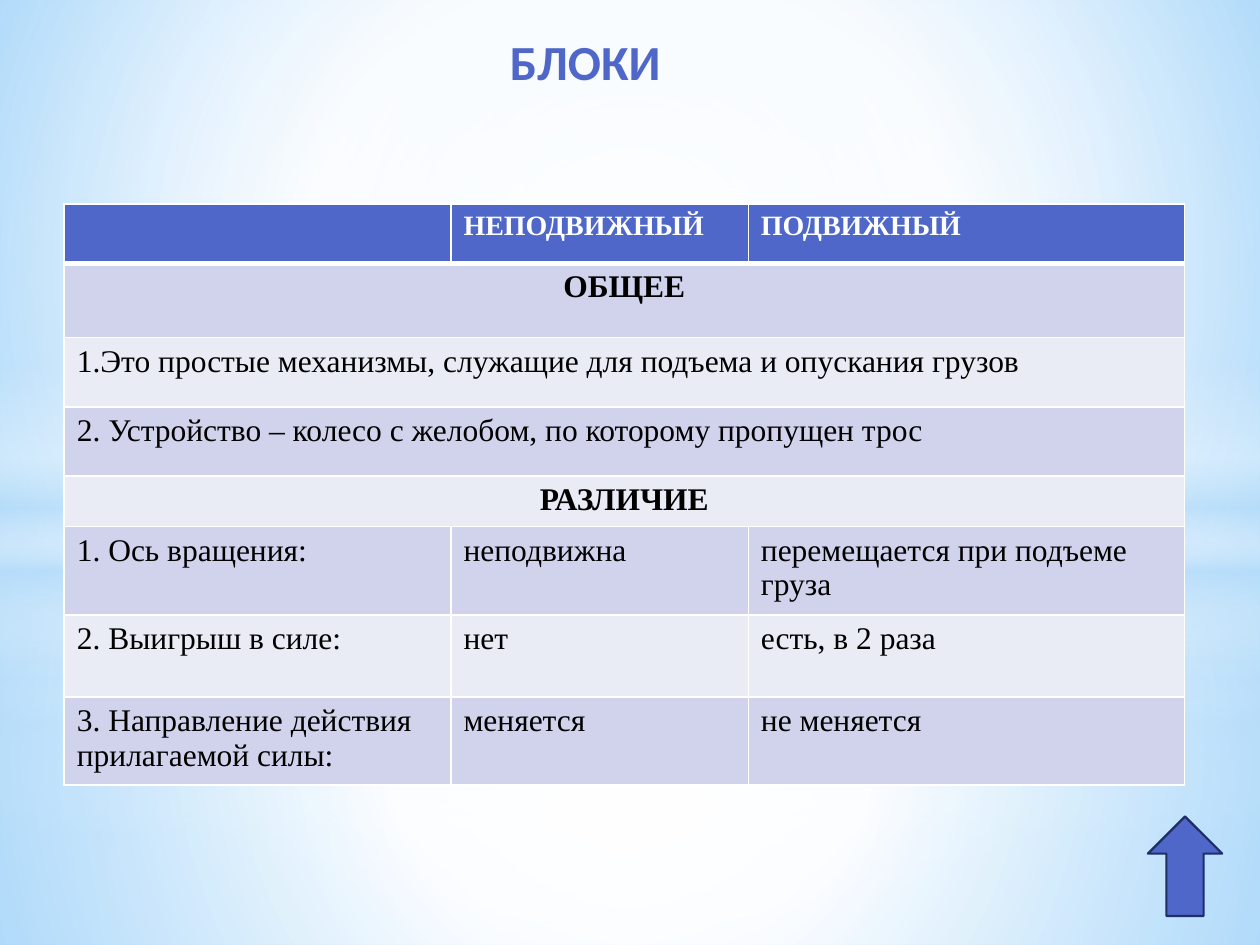
from lxml import etree
from pptx import Presentation
from pptx.dml.color import RGBColor
from pptx.enum import shapes, text
from pptx.oxml import ns
from pptx.util import Inches, Pt

BLUE = RGBColor(0x4E, 0x67, 0xC8)
NAVY = RGBColor(0x1F, 0x2E, 0x69)
DARK = RGBColor(0xD0, 0xD3, 0xEB)
LIGHT = RGBColor(0xE9, 0xEB, 0xF5)
WHITE = RGBColor(0xFF, 0xFF, 0xFF)
BLACK = RGBColor(0, 0, 0)
PALE = RGBColor(0xB4, 0xDC, 0xFA)
SKY = RGBColor(0x9E, 0xD5, 0xFF)
AZURE = RGBColor(0x5B, 0xB9, 0xFF)

SHAPE = shapes.MSO_SHAPE
CENTER = text.PP_ALIGN.CENTER
LEFT = text.PP_ALIGN.LEFT
MIDDLE = (50, 50, 50, 50)

COLS = (3.07, 2.36, 3.46)
HEIGHTS = (0.47, 0.59, 0.55, 0.55, 0.37, 0.65, 0.65, 0.65)
HEADS = ("ОБЩЕЕ", "РАЗЛИЧИЕ")
ROWS = (
    ("", "НЕПОДВИЖНЫЙ", "ПОДВИЖНЫЙ"),
    ("ОБЩЕЕ",),
    ("1.Это простые механизмы, служащие для подъема и опускания грузов",),
    ("2. Устройство – колесо с желобом, по которому пропущен трос",),
    ("РАЗЛИЧИЕ",),
    ("1. Ось вращения:", "неподвижна", "перемещается при подъеме груза"),
    ("2. Выигрыш в силе:", "нет", "есть, в 2 раза"),
    ("3. Направление действия прилагаемой силы:", "меняется", "не меняется"),
)


def add(node, tag, **attrs):
    """Append a drawing element and return it."""
    return etree.SubElement(node, ns.qn(tag), {k: str(v) for k, v in attrs.items()})


def shade(fill, root, stops, focus=None):
    """Fill with (position, colour, opacity) stops, around focus or top to bottom."""
    fill.gradient()
    grad = root.xpath(".//a:gradFill")[0]
    for child in list(grad):
        grad.remove(child)
    group = add(grad, "a:gsLst")
    for pos, color, alpha in stops:
        tone = add(add(group, "a:gs", pos=pos * 1000), "a:srgbClr", val=color)
        if alpha < 100:
            add(tone, "a:alpha", val=alpha * 1000)
    if focus:
        sides = {side: part * 1000 for side, part in zip("ltrb", focus)}
        add(add(grad, "a:path", path="circle"), "a:fillToRect", **sides)
    else:
        add(grad, "a:lin", ang=90 * 60000, scaled=0)


def edge(cell, base):
    """Draw white borders, with the given width at the bottom."""
    props = cell._tc.get_or_add_tcPr()
    for spot, (side, width) in enumerate(zip("LRTB", (1, 1, 1, base))):
        line = etree.Element(ns.qn(f"a:ln{side}"), w=str(int(Pt(width))))
        add(add(line, "a:solidFill"), "a:srgbClr", val=WHITE)
        props.insert(spot, line)


class Deck:
    def __init__(self, font):
        self.font = font
        self.prs = Presentation()
        self.prs.slide_width, self.prs.slide_height = Inches(10), Inches(7.5)
        self.slide = self.prs.slides.add_slide(self.prs.slide_layouts[6])

    def back(self, stops, focus):
        shade(self.slide.background.fill, self.slide._element, stops, focus)

    def shape(self, kind, *box):
        item = self.slide.shapes.add_shape(kind, *map(Inches, box))
        item.shadow.inherit = False
        item.line.fill.background()
        return item

    def glow(self, kind, top, height, stops, focus=None):
        """Add a full-width gradient layer."""
        item = self.shape(kind, 0, top, 10, height)
        shade(item.fill, item._element, stops, focus)

    def label(self, frame, words, size, color, bold=False, align=LEFT, font=None):
        para = frame.paragraphs[0]
        para.alignment = align
        run = para.add_run()
        run.text = words
        run.font.name = font or self.font
        run.font.size, run.font.bold = Pt(size), bold
        run.font.color.rgb = color

    def title(self, words, *box):
        frame = self.slide.shapes.add_textbox(*map(Inches, box)).text_frame
        frame.word_wrap = True
        frame.vertical_anchor = text.MSO_ANCHOR.MIDDLE
        self.label(frame, words, 28, BLUE, True, CENTER, "Calibri")

    def table(self, left, top):
        box = map(Inches, (left, top, sum(COLS), sum(HEIGHTS)))
        grid = self.slide.shapes.add_table(len(ROWS), len(COLS), *box).table
        for col, width in zip(grid.columns, COLS):
            col.width = Inches(width)
        for r, (words, height) in enumerate(zip(ROWS, HEIGHTS)):
            grid.rows[r].height = Inches(height)
            for c in range(len(COLS)):
                cell = grid.cell(r, c)
                cell.fill.solid()
                cell.fill.fore_color.rgb = (DARK if r % 2 else LIGHT) if r else BLUE
                edge(cell, 1 if r else 3)
            if len(words) == 1:
                grid.cell(r, 0).merge(grid.cell(r, len(COLS) - 1))
            for c, word in enumerate(words):
                frame = grid.cell(r, c).text_frame
                if r == 0:
                    if word:
                        self.label(frame, word, 16, WHITE, True)
                else:
                    head = word in HEADS
                    self.label(frame, word, 18, BLACK, head, CENTER if head else LEFT)

    def arrow(self, *box):
        item = self.shape(SHAPE.UP_ARROW, *box)
        item.fill.solid()
        item.fill.fore_color.rgb = BLUE
        item.line.color.rgb = NAVY
        item.line.width = Pt(1.25)


def veil(deck, split, band, lift, fade):
    """Layer floor, sky, horizon band and central light."""
    floor = [(0, WHITE, 91 + lift), (37, WHITE, 76 + lift), (100, PALE, 79 + lift)]
    sky = [(0, WHITE, 89 + lift), (48, WHITE, 62 + lift), (100, PALE, 79 + lift)]
    haze = [(0, WHITE, 0), (29, WHITE, 30), (45, PALE, 40),
            (55, WHITE, 26), (65, PALE, 60), (100, WHITE, 0)]
    deck.glow(SHAPE.RECTANGLE, split, 7.5 - split, floor, MIDDLE)
    deck.glow(SHAPE.RECTANGLE, 0, split, sky, MIDDLE)
    deck.glow(SHAPE.RECTANGLE, band, 2.5, haze)
    deck.glow(SHAPE.OVAL, 1.75, 5.58, [(0, WHITE, 100), (fade, WHITE, 0)], MIDDLE)


def main():
    deck = Deck("Times New Roman")
    deck.back([(0, SKY, 100), (60, WHITE, 100), (100, AZURE, 100)], (20, 10, 20, 60))
    veil(deck, 5.58, 4.12, 0, 56)
    veil(deck, 4.23, 2.9, 1, 54)
    deck.title("БЛОКИ", 1.38, 0.21, 6.53, 0.55)
    deck.table(0.51, 1.62)
    deck.arrow(9.11, 6.48, 0.59, 0.79)
    deck.prs.save("out.pptx")


if __name__ == "__main__":
    main()
